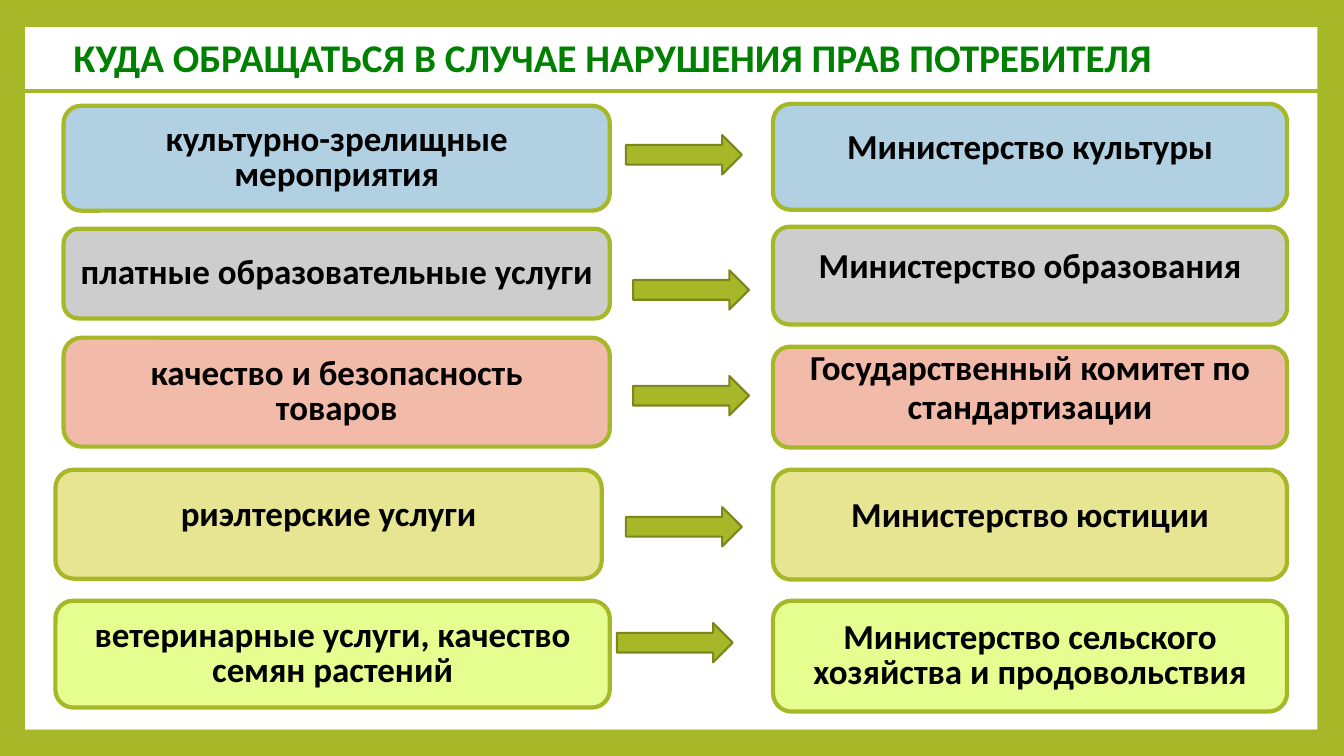
"""Build the slide that pairs consumer complaints with the bodies to contact."""
from lxml import etree
from pptx import Presentation
from pptx.dml.color import RGBColor
from pptx.enum.shapes import MSO_CONNECTOR, MSO_SHAPE
from pptx.enum.text import MSO_ANCHOR, PP_ALIGN
from pptx.oxml.ns import qn
from pptx.util import Pt

RECT, ROUND, ARROW = MSO_SHAPE.RECTANGLE, MSO_SHAPE.ROUNDED_RECTANGLE, MSO_SHAPE.RIGHT_ARROW
STRAIGHT = MSO_CONNECTOR.STRAIGHT
MIDDLE, LEFT, CENTER = MSO_ANCHOR.MIDDLE, PP_ALIGN.LEFT, PP_ALIGN.CENTER

OLIVE = RGBColor(0xA6, 0xB7, 0x27)
DARK = RGBColor(0x7B, 0x87, 0x1D)
WHITE = RGBColor(0xFF, 0xFF, 0xFF)
BLACK = RGBColor(0, 0, 0)
GREEN = RGBColor(0, 0x80, 0)
BLUE = RGBColor(0xB1, 0xD1, 0xE3)
GRAY = RGBColor(0xCD, 0xCD, 0xCD)
PINK = RGBColor(0xF2, 0xBA, 0xA9)
SAND = RGBColor(0xE7, 0xE5, 0x91)
LIME = RGBColor(0xE6, 0xFE, 0x90)

TITLE = "КУДА ОБРАЩАТЬСЯ В СЛУЧАЕ НАРУШЕНИЯ ПРАВ ПОТРЕБИТЕЛЯ"

# fill, issue (lines, leading, box), arrow (left, top), body (lines, leading, gap, top, height)
ROWS = [
    {"fill": BLUE, "issue": ["культурно-зрелищные мероприятия"], "lead": 25,
     "box": (45.4, 75.6, 390.2, 74.9), "arrow": (447.1, 96.5),
     "body": ["Министерство культуры"], "step": 14, "top": 74.2, "high": 75.6},
    {"fill": GRAY, "issue": ["платные образовательные услуги"], "lead": 25,
     "box": (45.4, 163.4, 390.2, 64.1), "arrow": (452.2, 193),
     "body": ["Министерство образования"], "step": 14, "top": 162, "high": 69.8},
    {"fill": PINK, "issue": ["качество и безопасность", "товаров"], "lead": 25,
     "box": (45.4, 241.2, 390.2, 77.8), "arrow": (452.2, 268.6),
     "body": ["Государственный комитет по", "стандартизации"], "step": 14, "gap": 14,
     "top": 247.7, "high": 72},
    {"fill": SAND, "issue": ["риэлтерские услуги"], "lead": 14,
     "box": (39.6, 335.5, 390.2, 77.8), "arrow": (447.1, 362.2),
     "body": ["Министерство юстиции"], "step": 14, "top": 335.5, "high": 78.5},
    {"fill": LIME, "issue": ["ветеринарные услуги, качество", "семян растений"], "lead": 25,
     "box": (39.6, 429.1, 396, 76.3), "arrow": (440.6, 445),
     "body": ["Министерство сельского", "хозяйства и продовольствия"], "step": 25,
     "top": 429.1, "high": 79.2},
]
BODY_X, BODY_W = 552.2, 367.2
ARROW_SIZE = (82.8, 28.1)

deck = Presentation()
deck.slide_width, deck.slide_height = Pt(960), Pt(540)
slide = deck.slides.add_slide(deck.slide_layouts[6])
slide.background.fill.solid()
slide.background.fill.fore_color.rgb = OLIVE


def draw(kind, box, fill, line=None, width=0):
    """Add a filled shape, outlined when a line colour is given."""
    shape = slide.shapes.add_shape(kind, *map(Pt, box))
    shape.shadow.inherit = False
    shape.fill.solid()
    shape.fill.fore_color.rgb = fill
    if line is None:
        shape.line.fill.background()
    else:
        shape.line.color.rgb = line
        shape.line.width = Pt(width)
    return shape


def write(frame, lines, size, color, align, lead=None, gap=0):
    """Fill a text frame with one bold paragraph for each line."""
    frame.word_wrap = True
    look = {"name": "Calibri", "size": Pt(size), "bold": True}
    for i, text in enumerate(lines):
        para = frame.add_paragraph() if i else frame.paragraphs[0]
        para.alignment = align
        if lead:
            para.line_spacing = Pt(lead)
        para.space_before = Pt(gap if i else 0)
        run = para.add_run()
        run.text = text
        for key, value in look.items():
            setattr(run.font, key, value)
        run.font.color.rgb = color


def card(box, fill, lines, lead, gap=0):
    """Add a rounded box with centred text."""
    frame = draw(ROUND, box, fill, OLIVE, 3).text_frame
    frame.vertical_anchor = MIDDLE
    write(frame, lines, 25, BLACK, CENTER, lead, gap)


draw(RECT, (18, 19.4, 923, 501.9), WHITE)
draw(RECT, (0, 521.3, 960, 18.7), OLIVE)
title = slide.shapes.add_textbox(Pt(45.4), Pt(20.2), Pt(874), Pt(41))
write(title.text_frame, [TITLE], 28, GREEN, LEFT)

rule = slide.shapes.add_connector(STRAIGHT, Pt(15.8), Pt(64.8), Pt(948.2), Pt(64.8))
rule.line.color.rgb = OLIVE
rule.line.width = Pt(3)
etree.SubElement(rule._element.spPr, qn("a:effectLst"))

for row in ROWS:
    draw(ARROW, row["arrow"] + ARROW_SIZE, OLIVE, DARK, 1.5)
    card(row["box"], row["fill"], row["issue"], row["lead"])
    place = (BODY_X, row["top"], BODY_W, row["high"])
    card(place, row["fill"], row["body"], row["step"], row.get("gap", 0))

deck.save("out.pptx")
